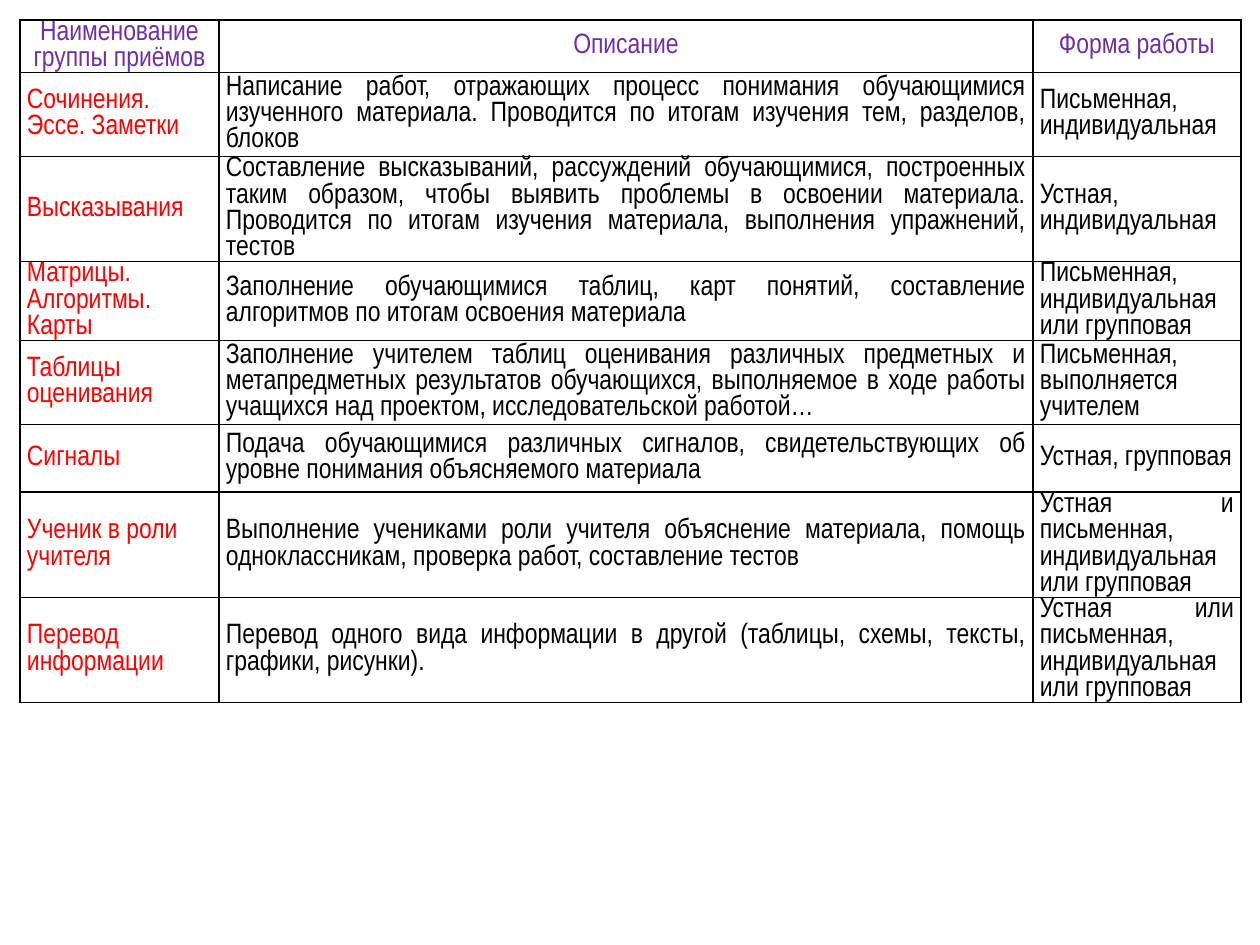
"""Build a slide with a table of reflection techniques."""
from lxml.etree import SubElement
from pptx import Presentation
from pptx.dml.color import RGBColor
from pptx.enum.text import MSO_ANCHOR, PP_ALIGN
from pptx.oxml.ns import qn
from pptx.util import Emu, Pt

HEAD = ("Наименование группы приёмов", "Описание", "Форма работы")
BODY = [
    ("Сочинения. Эссе. Заметки",
     "Написание работ, отражающих процесс понимания обучающимися изученного "
     "материала. Проводится по итогам изучения тем, разделов, блоков",
     "Письменная, индивидуальная"),
    ("Высказывания",
     "Составление высказываний, рассуждений обучающимися, построенных таким "
     "образом, чтобы выявить проблемы в освоении материала. Проводится по "
     "итогам изучения материала, выполнения упражнений, тестов",
     "Устная, индивидуальная"),
    ("Матрицы. Алгоритмы. Карты",
     "Заполнение обучающимися таблиц, карт понятий, составление алгоритмов "
     "по итогам освоения материала",
     "Письменная, индивидуальная или групповая"),
    ("Таблицы оценивания",
     "Заполнение учителем таблиц оценивания различных предметных и "
     "метапредметных результатов обучающихся, выполняемое в ходе работы "
     "учащихся над проектом, исследовательской работой…",
     "Письменная, выполняется учителем"),
    ("Сигналы",
     "Подача обучающимися различных сигналов, свидетельствующих об уровне "
     "понимания объясняемого материала",
     "Устная, групповая"),
    ("Ученик в роли учителя",
     "Выполнение учениками роли учителя объяснение материала, помощь "
     "одноклассникам, проверка работ, составление тестов",
     "Устная и письменная, индивидуальная или групповая"),
    ("Перевод информации",
     "Перевод одного вида информации в другой (таблицы, схемы, тексты, "
     "графики, рисунки).",
     "Устная или письменная, индивидуальная или групповая"),
]
COLS = (199, 814, 208)
ROWS = (15, 84, 102, 68, 84, 68, 68, 68)
PURPLE, RED, BLACK = "7030A0", "FF0000", "000000"


def px(num):
    """Turn px into EMU."""
    return Emu(round(num * 914400 / 126))


def paint(code):
    """Turn a hex string into a colour."""
    return RGBColor.from_string(code)


def apply(item, form):
    """Set each attribute of a format dict on an item."""
    for name, value in form.items():
        setattr(item, name, value)


def frame(cell):
    """Draw thin black lines on the four sides of a cell."""
    props = cell._tc.get_or_add_tcPr()
    for side in ("lnL", "lnR", "lnT", "lnB"):
        line = SubElement(props, qn(f"a:{side}"), w=str(Pt(1)))
        fill = SubElement(line, qn("a:solidFill"))
        SubElement(fill, qn("a:srgbClr"), val=BLACK)


def write(cell, text, code, align):
    """Fill one cell with formatted text."""
    cell.text = text
    apply(cell, {"vertical_anchor": MSO_ANCHOR.MIDDLE,
                 "margin_left": px(7), "margin_right": px(7),
                 "margin_top": 0, "margin_bottom": 0})
    frame(cell)
    cell.fill.background()
    para = cell.text_frame.paragraphs[0]
    apply(para, {"alignment": align, "line_spacing": Pt(15)})
    font = para.runs[0].font
    apply(font, {"name": "Arial Narrow", "size": Pt(16), "bold": False})
    font.color.rgb = paint(code)


def style(row, col):
    """Give the colour and alignment of a cell by its place."""
    if row == 0:
        return PURPLE, PP_ALIGN.CENTER
    if col == 0:
        return RED, PP_ALIGN.LEFT if row > 5 else PP_ALIGN.JUSTIFY
    return BLACK, PP_ALIGN.JUSTIFY


def grid(slide, left, top, width, height):
    """Place the table of techniques in a box."""
    data = [HEAD, *BODY]
    shape = slide.shapes.add_table(len(data), len(HEAD), px(left), px(top),
                                   px(width), px(height))
    table = shape.table
    apply(table, {"first_row": False, "horz_banding": False})
    for col, size in zip(table.columns, COLS):
        col.width = px(size)
    for row, size in zip(table.rows, ROWS):
        row.height = px(size)
    for r, line in enumerate(data):
        for c, text in enumerate(line):
            write(table.cell(r, c), text, *style(r, c))
    shape.height = px(height)


def main():
    """Make the deck and save it."""
    deck = Presentation()
    apply(deck, {"slide_width": px(1260), "slide_height": px(945)})
    slide = deck.slides.add_slide(deck.slide_layouts[6])
    grid(slide, 20, 20, sum(COLS), 840)
    deck.save("out.pptx")


if __name__ == "__main__":
    main()
